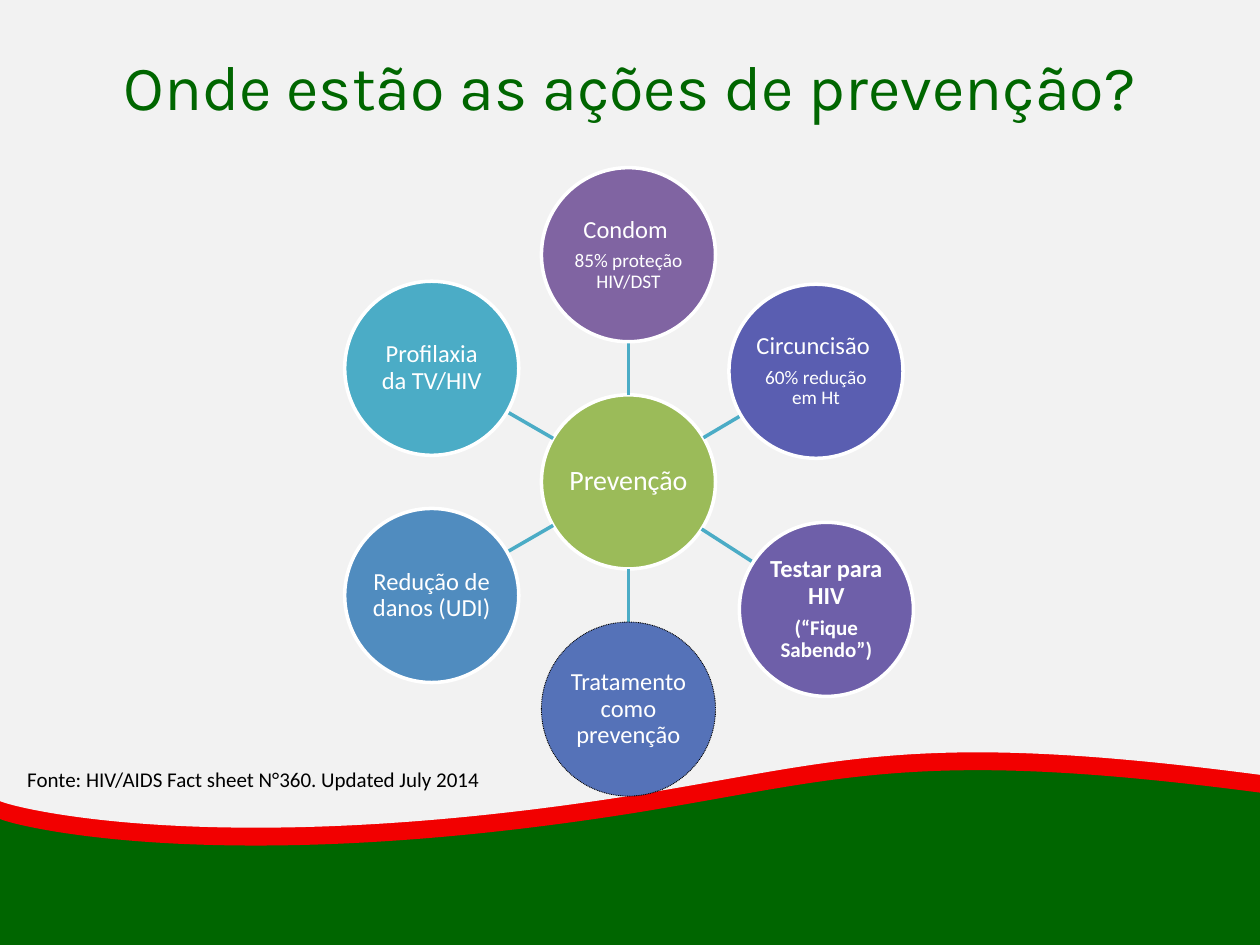
from math import cos, hypot, radians, sin

from lxml.etree import SubElement
from pptx import Presentation
from pptx.dml.color import RGBColor
from pptx.enum.dml import MSO_LINE
from pptx.enum.shapes import MSO_CONNECTOR, MSO_SHAPE
from pptx.enum.text import MSO_ANCHOR, PP_ALIGN
from pptx.oxml.ns import qn
from pptx.util import Cm, Pt

WIDTH, HEIGHT = 25.4, 19.05
DIAMETER = 3.51
RING = 4.58
WAVE_BOTTOM = 16.7
WAVE = [
    (0, 16.15), (0.2, 16.26), (4.32, 17.37), (12.78, 16.03),
    (17.02, 15.34), (18.47, 14.71), (WIDTH, 15.62),
]


def color(value):
    """Return the colour for a hex string."""
    return RGBColor.from_string(value)


def fill_shape(shape, fill):
    """Give a shape a solid fill with no line or shadow."""
    shape.shadow.inherit = False
    shape.fill.solid()
    shape.fill.fore_color.rgb = color(fill)
    shape.line.fill.background()


def write_text(para, text, *, size, font="Calibri", ink="FFFFFF", bold=False,
               align=PP_ALIGN.CENTER, spacing=None, after=None):
    """Write one formatted run into a paragraph."""
    para.alignment = align
    para.line_spacing = spacing
    para.space_after = after
    span = para.add_run()
    span.text = text
    span.font.name = font
    span.font.size = Pt(size)
    span.font.bold = bold
    span.font.color.rgb = color(ink)


def add_label(page, box, text, anchor=MSO_ANCHOR.TOP, **style):
    """Add a wrapping text box that holds one paragraph."""
    frame = page.shapes.add_textbox(*map(Cm, box)).text_frame
    frame.word_wrap = True
    frame.vertical_anchor = anchor
    write_text(frame.paragraphs[0], text, **style)


def bend_lines(outline, start, count):
    """Turn count groups of three line segments into cubic curves."""
    lines = outline.findall(qn("a:lnTo"))[start:start + 3 * count]
    for first, second, third in zip(*[iter(lines)] * 3):
        first.tag = qn("a:cubicBezTo")
        for line in (second, third):
            first.append(line[0])
            outline.remove(line)


def add_wave(page, top, drop, fill):
    """Fill the area from a top edge down to the wave, lowered by drop."""
    points = [(x, y + drop) for x, y in WAVE] + [(WIDTH, top)]
    builder = page.shapes.build_freeform(0, Cm(top))
    builder.add_line_segments([(Cm(x), Cm(y)) for x, y in points], close=True)
    wave = builder.convert_to_shape()
    outline = next(wave.element.iter(qn("a:path")))
    bend_lines(outline, 1, 2)
    wave.height = Cm(WAVE_BOTTOM + drop - top)
    outline.set("h", str(wave.height))
    fill_shape(wave, fill)


def add_backdrop(page):
    """Draw the green ground, the red band and the grey field."""
    ground = page.shapes.add_shape(
        MSO_SHAPE.RECTANGLE, 0, Cm(13.36), Cm(WIDTH), Cm(HEIGHT - 13.36))
    fill_shape(ground, "006600")
    add_wave(page, 12.75, 0.36, "F20000")
    add_wave(page, 0, 0, "F2F2F2")


def add_circle(page, center, fill, lines, bold=False, dotted=False):
    """Draw a circle with its lines of text, each a (text, size) pair."""
    x, y = center
    circle = page.shapes.add_shape(
        MSO_SHAPE.OVAL, Cm(x - DIAMETER / 2), Cm(y - DIAMETER / 2), Cm(DIAMETER), Cm(DIAMETER))
    fill_shape(circle, fill)
    circle.line.color.rgb = color("000000" if dotted else "FFFFFF")
    circle.line.width = Pt(0.5 if dotted else 2)
    if dotted:
        circle.line.dash_style = MSO_LINE.ROUND_DOT
    frame = circle.text_frame
    frame.word_wrap = True
    frame.vertical_anchor = MSO_ANCHOR.MIDDLE
    frame.margin_left = frame.margin_right = Cm(0.02)
    frame.margin_top = frame.margin_bottom = Cm(0.02)
    for index, (text, size) in enumerate(lines):
        para = frame.add_paragraph() if index else frame.paragraphs[0]
        write_text(para, text, size=size, bold=bold, spacing=0.9, after=Pt(size * 0.3))


def add_spoke(page, hub, center):
    """Join the edge of the hub to the edge of an outer circle."""
    dx, dy = center[0] - hub[0], center[1] - hub[1]
    share = DIAMETER / 2 / hypot(dx, dy)
    ends = [Cm(start + delta * part) for part in (share, 1 - share)
            for start, delta in zip(hub, (dx, dy))]
    spoke = page.shapes.add_connector(MSO_CONNECTOR.STRAIGHT, *ends)
    spoke.line.color.rgb = color("4BACC6")
    spoke.line.width = Pt(2)
    SubElement(spoke.element.spPr, qn("a:effectLst"))


def add_prevention_wheel(page, box):
    """Draw the hub and the six actions around it inside a box."""
    left, top, width, height = box
    hub = (left + width / 2, top + height / 2)

    def on_ring(angle):
        """Return the offset from the hub at an angle on the ring."""
        return RING * cos(radians(angle)), RING * sin(radians(angle))

    actions = [
        (on_ring(-90), "8064A2", [("Condom ", 14), ("85% proteção HIV/DST", 11)], {}),
        ((3.99, 2.57), "6E5FA9", [("Testar para HIV", 14), ("(“Fique Sabendo”)", 12)],
         {"bold": True}),
        ((3.78, -2.23), "5A5EB1", [("Circuncisão ", 14), ("60% redução em Ht", 11)], {}),
        (on_ring(90), "5572B8", [("Tratamento como prevenção", 14)], {"dotted": True}),
        (on_ring(150), "508CBF", [("Redução de danos (UDI)", 14)], {}),
        (on_ring(210), "4BACC6", [("Profilaxia da TV/HIV", 14)], {}),
    ]
    add_circle(page, hub, "9BBB59", [("Prevenção", 16)])
    for (dx, dy), fill, lines, style in actions:
        center = (hub[0] + dx, hub[1] + dy)
        add_spoke(page, hub, center)
        add_circle(page, center, fill, lines, **style)


def main():
    """Build and save the deck."""
    deck = Presentation()
    deck.slide_width, deck.slide_height = Cm(WIDTH), Cm(HEIGHT)
    page = deck.slides.add_slide(deck.slide_layouts[6])
    add_backdrop(page)
    add_label(page, (1.27, 0.13, 22.86, 3.18), "Onde estão as ações de prevenção?",
              anchor=MSO_ANCHOR.MIDDLE, size=36, font="Karla", ink="006600")
    add_prevention_wheel(page, (6.93, 3.38, 11.48, 12.67))
    add_label(page, (0.3, 15.32, 12.7, 0.77),
              "Fonte: HIV/AIDS Fact sheet N°360. Updated July 2014",
              size=12, ink="000000", align=PP_ALIGN.LEFT)
    deck.save("out.pptx")


if __name__ == "__main__":
    main()
